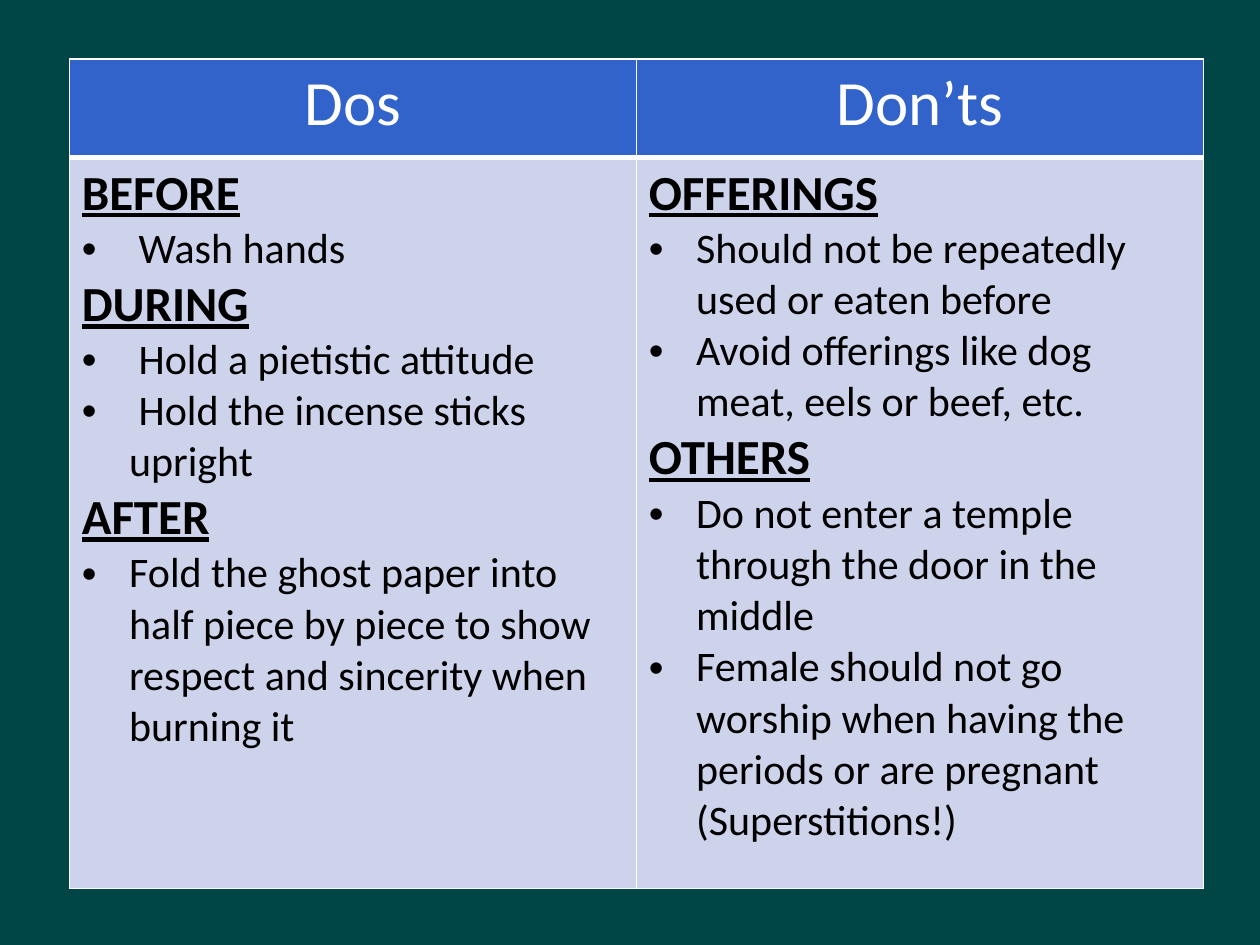
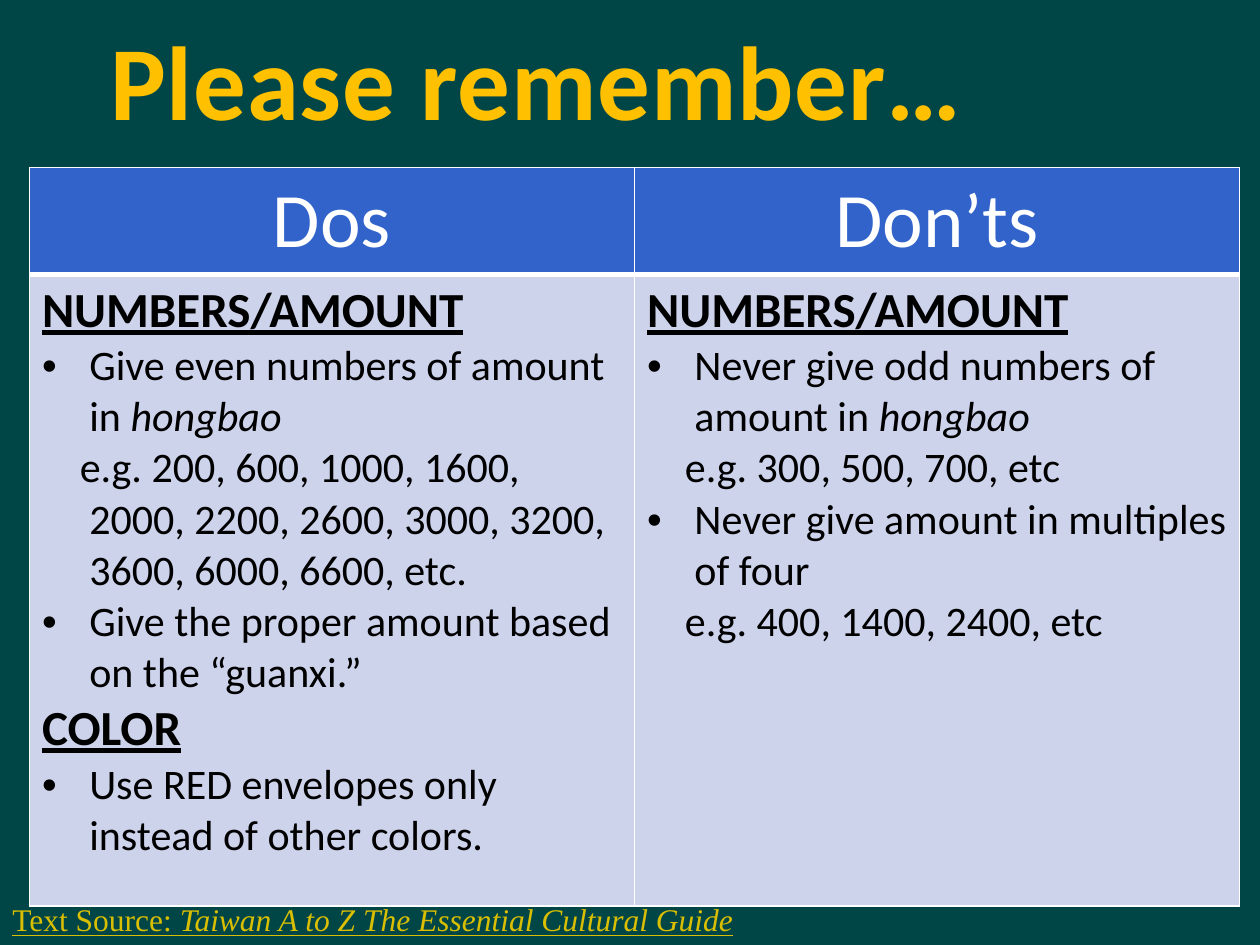
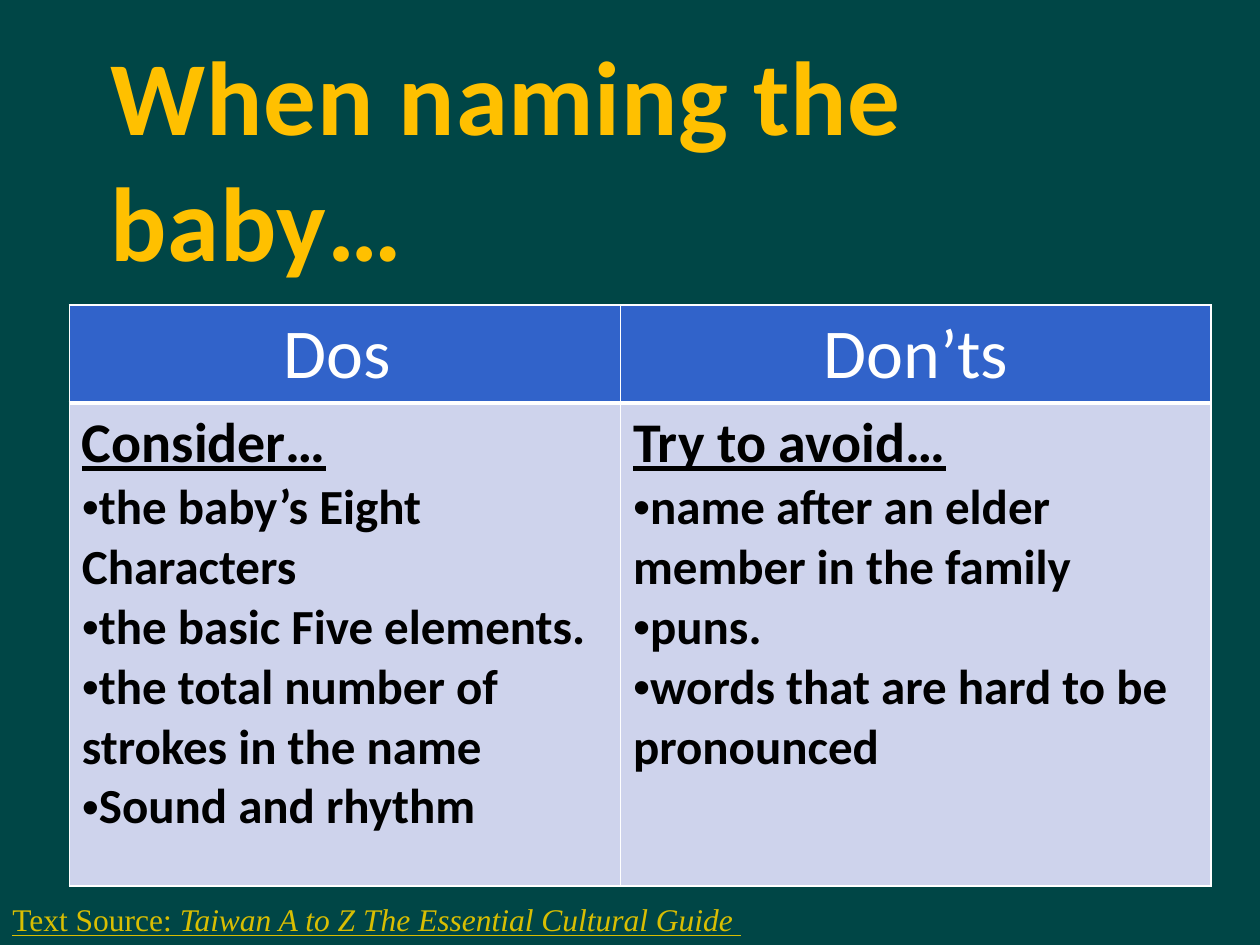
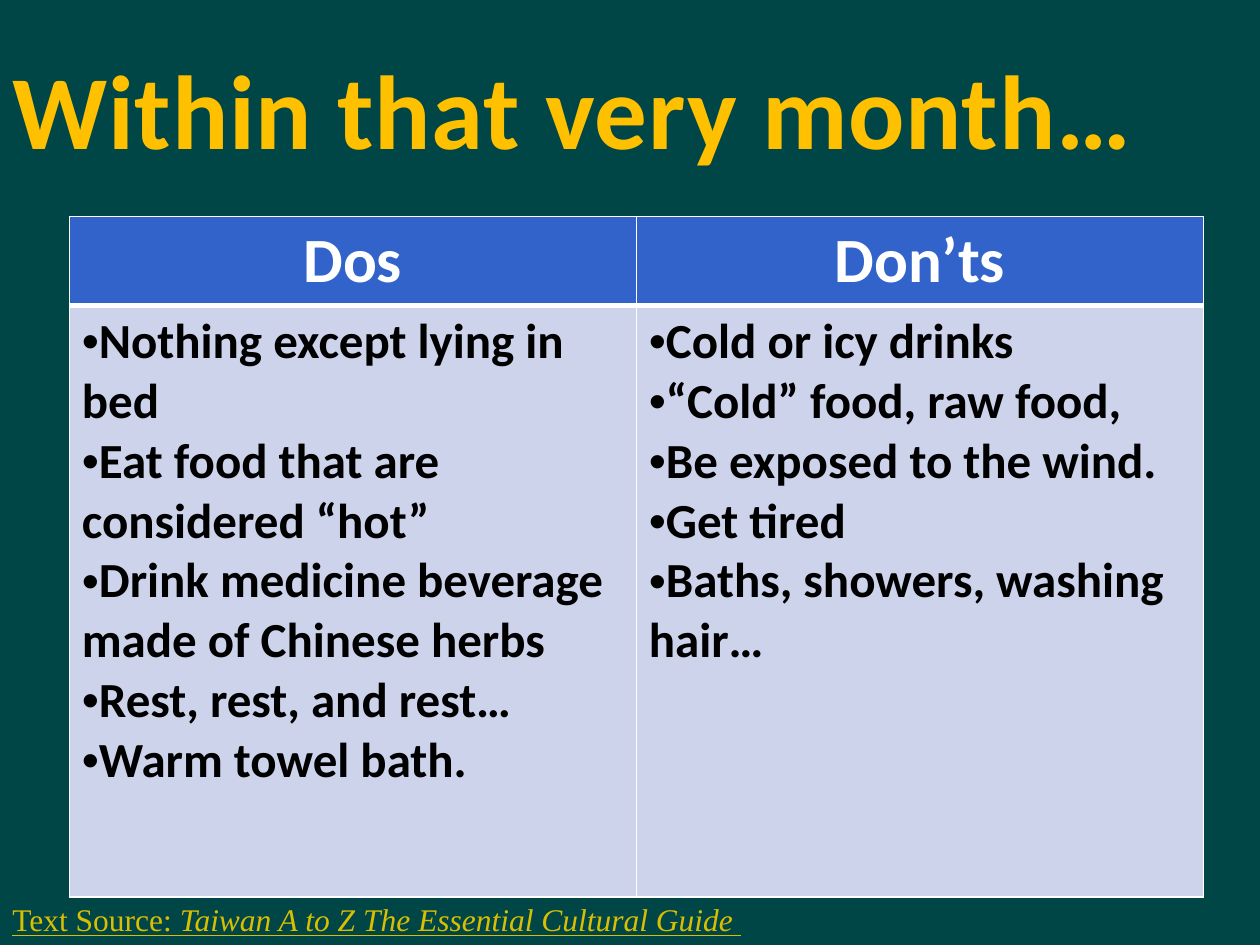
from lxml.etree import SubElement
from pptx import Presentation
from pptx.dml.color import RGBColor
from pptx.enum.text import MSO_ANCHOR, PP_ALIGN
from pptx.oxml.ns import qn
from pptx.util import Pt

COLORS = {
    "background": "004646",
    "title": "FFC000",
    "source": "D9BE02",
    "header": "3163CA",
    "body": "CED3EC",
    "border": "FFFFFF",
    "header_text": "FFFFFF",
    "body_text": "000000",
}
HANGING = 27
EXAMPLE_INDENT = -5.4

# Each advice line is (kind, run, run, ...); every second run is italic
LESSONS = [
    {
        "table": (39.6, 33.84), "columns": (324, 324), "rows": (56, 418),
        "headers": ("Dos", "Don’ts"), "header_size": 36, "header_bold": False,
        "heading_size": 28, "item_size": 24, "item_bold": False, "hanging": HANGING,
        "advice": (
            [("heading", "BEFORE"),
             ("bullet", " Wash hands"),
             ("heading", "DURING"),
             ("bullet", " Hold a pietistic attitude"),
             ("bullet", " Hold the incense sticks upright"),
             ("heading", "AFTER"),
             ("bullet", "Fold the ghost paper into half piece by piece to show "
                        "respect and sincerity when burning it")],
            [("heading", "OFFERINGS"),
             ("bullet", "Should not be repeatedly used or eaten before"),
             ("bullet", "Avoid offerings like dog meat, eels or beef, etc."),
             ("heading", "OTHERS"),
             ("bullet", "Do not enter a temple through the door in the middle"),
             ("bullet", "Female should not go worship when having the periods "
                        "or are pregnant (Superstitions!)")],
        ),
    },
    {
        "title": "Please remember…", "title_box": (56, 0, 556.5, 90),
        "table": (16.8, 95.8), "columns": (345.8, 345.8), "rows": (61, 361),
        "headers": ("Dos", "Don’ts"), "header_size": 44, "header_bold": False,
        "heading_size": 28, "item_size": 24, "item_bold": False, "hanging": HANGING,
        "advice": (
            [("heading", "NUMBERS/AMOUNT"),
             ("bullet", "Give even numbers of amount in ", "hongbao"),
             ("example", "e.g. 200, 600, 1000, 1600, 2000, 2200, 2600, 3000, "
                         "3200, 3600, 6000, 6600, etc."),
             ("bullet", "Give the proper amount based on the “guanxi.”"),
             ("heading", "COLOR"),
             ("bullet", "Use RED envelopes only instead of other colors.")],
            [("heading", "NUMBERS/AMOUNT"),
             ("bullet", "Never give odd numbers of amount in ", "hongbao"),
             ("example", "e.g. 300, 500, 700, etc"),
             ("bullet", "Never give amount in multiples of four"),
             ("example", "e.g. 400, 1400, 2400, etc")],
        ),
        "source": ("Text Source: ", "Taiwan A to Z The Essential Cultural Guide"),
        "source_width": 544,
    },
    {
        "title": "When naming the baby…", "title_box": (56, 44.6, 630, 90),
        "table": (39.6, 174.4), "columns": (315, 337.5), "rows": (56, 276),
        "headers": ("Dos ", "Don’ts"), "header_size": 40, "header_bold": False,
        "heading_size": 32, "item_size": 28, "item_bold": True, "hanging": 0,
        "advice": (
            [("heading", "Consider…"),
             ("bullet", "the baby’s Eight Characters"),
             ("bullet", "the basic Five elements."),
             ("bullet", "the total number of strokes in the name"),
             ("bullet", "Sound and rhythm")],
            [("heading", "Try to avoid…"),
             ("bullet", "name after an elder member in the family"),
             ("bullet", "puns."),
             ("bullet", "words that are hard to be pronounced")],
        ),
        "source": ("Text Source: ", "Taiwan A to Z The Essential Cultural Guide", " "),
        "source_width": 438.5,
    },
    {
        "title": "Within that very month…", "title_box": (0, 16.6, 720, 90),
        "table": (39.6, 123.6), "columns": (324, 324), "rows": (51, 338),
        "headers": ("Dos", "Don’ts"), "header_size": 36, "header_bold": True,
        "heading_size": 28, "item_size": 28, "item_bold": True, "hanging": 0,
        "advice": (
            [("bullet", "Nothing except lying in bed"),
             ("bullet", "Eat food that are considered “hot”"),
             ("bullet", "Drink medicine beverage made of Chinese herbs"),
             ("bullet", "Rest, rest, and rest…"),
             ("bullet", "Warm towel bath.")],
            [("bullet", "Cold or icy drinks"),
             ("bullet", "“Cold” food, raw food,"),
             ("bullet", "Be exposed to the wind."),
             ("bullet", "Get tired"),
             ("bullet", "Baths, showers, washing hair…")],
        ),
        "source": ("Text Source: ", "Taiwan A to Z The Essential Cultural Guide", " "),
        "source_width": 438.5,
    },
]


def add_runs(paragraph, texts, size, color, bold=False, underline=False, face="Calibri"):
    """Add the texts as runs, every second one italic."""
    for number, text in enumerate(texts):
        run = paragraph.add_run()
        run.text = text
        run.font.name = face
        run.font.size = Pt(size)
        run.font.bold = bold
        run.font.italic = number % 2 == 1
        run.font.underline = underline
        run.font.color.rgb = RGBColor.from_string(COLORS[color])


def style_cell(cell, fill, bottom_width):
    """Give a cell white borders and a plain fill."""
    properties = cell._tc.get_or_add_tcPr()
    for side in "LRTB":
        width = bottom_width if side == "B" else 1
        line = SubElement(properties, qn(f"a:ln{side}"), w=str(Pt(width)))
        solid = SubElement(line, qn("a:solidFill"))
        SubElement(solid, qn("a:srgbClr"), val=COLORS["border"])
    cell.fill.solid()
    cell.fill.fore_color.rgb = RGBColor.from_string(COLORS[fill])


deck = Presentation()
deck.slide_width, deck.slide_height = Pt(720), Pt(540)

for lesson in LESSONS:
    slide = deck.slides.add_slide(deck.slide_layouts[6])
    slide.background.fill.solid()
    slide.background.fill.fore_color.rgb = RGBColor.from_string(COLORS["background"])

    # Title
    if "title" in lesson:
        title = slide.shapes.add_textbox(*map(Pt, lesson["title_box"])).text_frame
        title.word_wrap = True
        title.vertical_anchor = MSO_ANCHOR.MIDDLE
        add_runs(title.paragraphs[0], [lesson["title"]], 60, "title", bold=True)
        title.paragraphs[0].runs[0].font._element.set("spc", "50")

    # Table of dos and don'ts
    left, top = lesson["table"]
    width, height = sum(lesson["columns"]), sum(lesson["rows"])
    advice_table = slide.shapes.add_table(
        2, 2, Pt(left), Pt(top), Pt(width), Pt(height)).table
    advice_table.first_row = advice_table.horz_banding = False
    for row, row_height in zip(advice_table.rows, lesson["rows"]):
        row.height = Pt(row_height)

    for index, column_width in enumerate(lesson["columns"]):
        advice_table.columns[index].width = Pt(column_width)

        # Header cell
        header = advice_table.cell(0, index)
        style_cell(header, "header", 3)
        heading = header.text_frame.paragraphs[0]
        heading.alignment = PP_ALIGN.CENTER
        add_runs(heading, [lesson["headers"][index]], lesson["header_size"],
                 "header_text", bold=lesson["header_bold"])

        # Advice cell
        body = advice_table.cell(1, index)
        style_cell(body, "body", 1)
        for number, (kind, *texts) in enumerate(lesson["advice"][index]):
            frame = body.text_frame
            paragraph = frame.add_paragraph() if number else frame.paragraphs[0]
            hanging = lesson["hanging"]
            first_line = EXAMPLE_INDENT if kind == "example" else -hanging
            layout = paragraph._p.get_or_add_pPr()
            layout.set("marL", str(Pt(hanging)))
            layout.set("indent", str(Pt(first_line)))
            if kind == "bullet":
                SubElement(layout, qn("a:buFont"), typeface="Arial")
                SubElement(layout, qn("a:buChar"), char="•")
            else:
                SubElement(layout, qn("a:buNone"))
            is_heading = kind == "heading"
            add_runs(paragraph, texts,
                     lesson["heading_size" if is_heading else "item_size"], "body_text",
                     bold=is_heading or lesson["item_bold"], underline=is_heading)

    # Source line
    if "source" in lesson:
        source = slide.shapes.add_textbox(
            Pt(0), Pt(511), Pt(lesson["source_width"]), Pt(29)).text_frame
        source.word_wrap = True
        add_runs(source.paragraphs[0], lesson["source"], 18, "source",
                 underline=True, face="Times New Roman")

deck.save("out.pptx")
